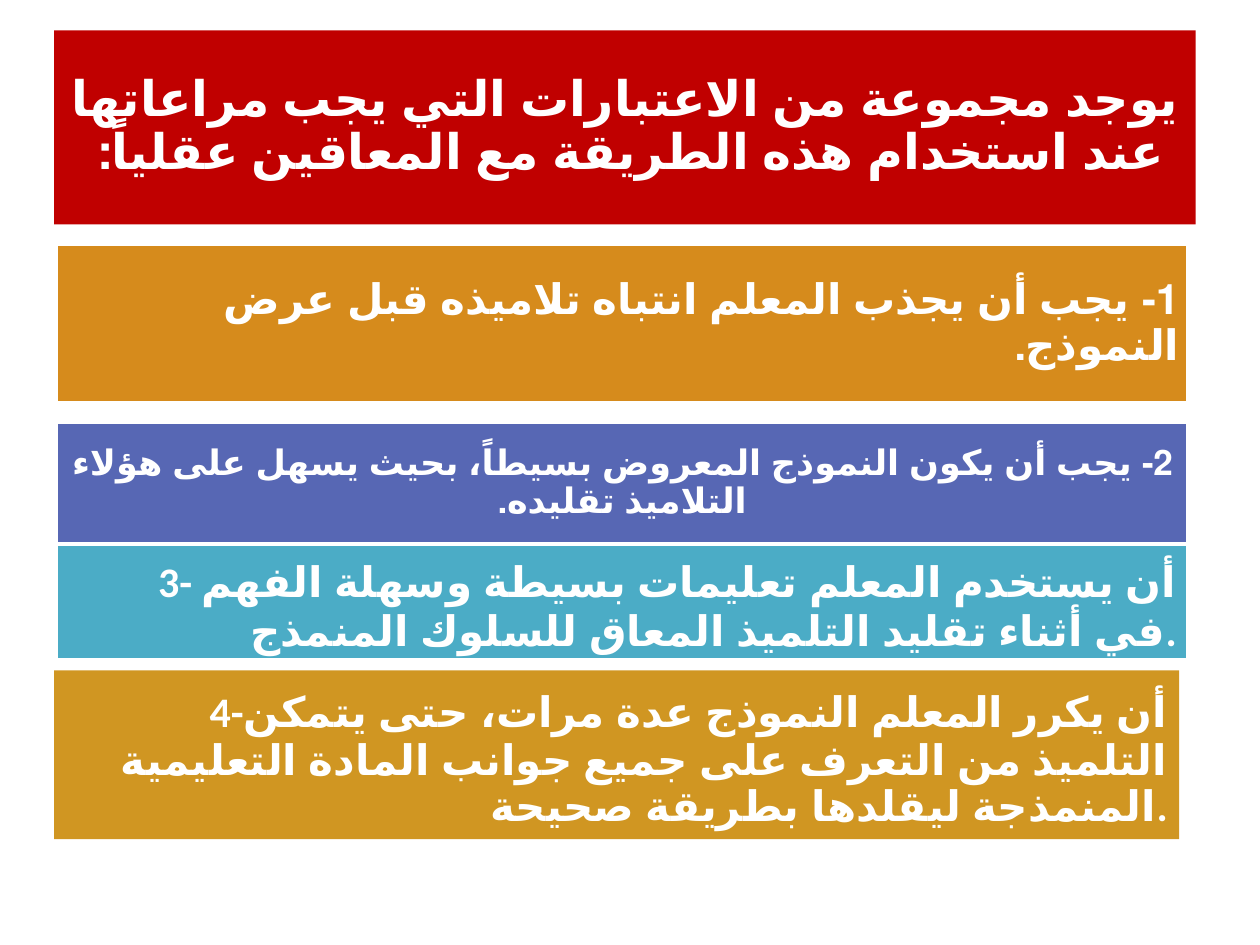
from pptx import Presentation
from pptx.dml.color import RGBColor
from pptx.enum.shapes import MSO_SHAPE
from pptx.enum.text import MSO_ANCHOR, MSO_AUTO_SIZE, PP_ALIGN
from pptx.util import Inches, Pt


def paint(fill, color):
    """Give a fill one solid colour."""
    fill.solid()
    fill.fore_color.rgb = RGBColor.from_string(color)


def write(box, pieces, align, inset, rtl):
    """Set one bold white Arabic paragraph from (text, size) pieces."""
    frame = box.text_frame
    frame.word_wrap = True
    frame.auto_size = MSO_AUTO_SIZE.NONE
    frame.vertical_anchor = MSO_ANCHOR.MIDDLE
    frame.margin_left = frame.margin_right = Inches(inset)
    frame.margin_top = frame.margin_bottom = Inches(inset)
    para = frame.paragraphs[0]
    para.alignment = align
    para.line_spacing = 0.9
    para._p.get_or_add_pPr().set("rtl", "1" if rtl else "0")
    for text, size in pieces:
        span = para.add_run()
        span.text = text
        span.font.name = "Calibri"
        span.font.size = Pt(size)
        span.font.bold = True
        paint(span.font.fill, "FFFFFF")
        # The language decides which Arabic typeface is chosen
        span._r.get_or_add_rPr().set("lang", "ar-SA")


deck = Presentation()
deck.slide_width, deck.slide_height = Inches(10), Inches(7.5)
page = deck.slides.add_slide(deck.slide_layouts[5])

# Title banner
title = page.shapes.title
title.left, title.top = Inches(0.43), Inches(0.24)
title.width, title.height = Inches(9.06), Inches(1.54)
paint(title.fill, "C00000")
heading = "يوجد مجموعة من الاعتبارات التي يجب مراعاتها عند استخدام هذه الطريقة مع المعاقين عقلياً: "
write(title, [(heading, 28)], PP_ALIGN.CENTER, 0.09, True)

# Numbered considerations: left, top, width, height, fill, outlined, align, inset, rtl, pieces
# A larger opening space makes the first line of the last two taller
RIGHT, CENTER = PP_ALIGN.RIGHT, PP_ALIGN.CENTER
considerations = [
    (0.45, 1.94, 8.98, 1.26, "D68B1C", True, RIGHT, 0.07, True,
     [("1- يجب أن يجذب المعلم انتباه تلاميذه قبل عرض النموذج.", 24)]),
    (0.45, 3.35, 8.98, 0.97, "5767B4", True, CENTER, 0.06, True,
     [("2- يجب أن يكون النموذج المعروض بسيطاً، بحيث يسهل على هؤلاء التلاميذ تقليده.", 20)]),
    (0.45, 4.32, 8.98, 0.92, "4BACC6", True, RIGHT, 0.09, False,
     [(" ", 32),
      ("3- أن يستخدم المعلم تعليمات بسيطة وسهلة الفهم في أثناء تقليد التلميذ المعاق "
       "للسلوك المنمذج.", 24)]),
    (0.43, 5.32, 8.93, 1.34, "D09622", False, RIGHT, 0.09, False,
     [(" ", 32),
      ("4-أن يكرر المعلم النموذج عدة مرات، حتى يتمكن التلميذ من التعرف على جميع جوانب "
       "المادة التعليمية المنمذجة ليقلدها بطريقة صحيحة.", 24)]),
]
for left, top, width, height, color, outlined, align, inset, rtl, pieces in considerations:
    box = page.shapes.add_shape(MSO_SHAPE.RECTANGLE, Inches(left), Inches(top),
                                Inches(width), Inches(height))
    box.shadow.inherit = False
    paint(box.fill, color)
    if outlined:
        paint(box.line.fill, "FFFFFF")
        box.line.width = Pt(2)
    else:
        box.line.fill.background()
    write(box, pieces, align, inset, rtl)

deck.save("out.pptx")
